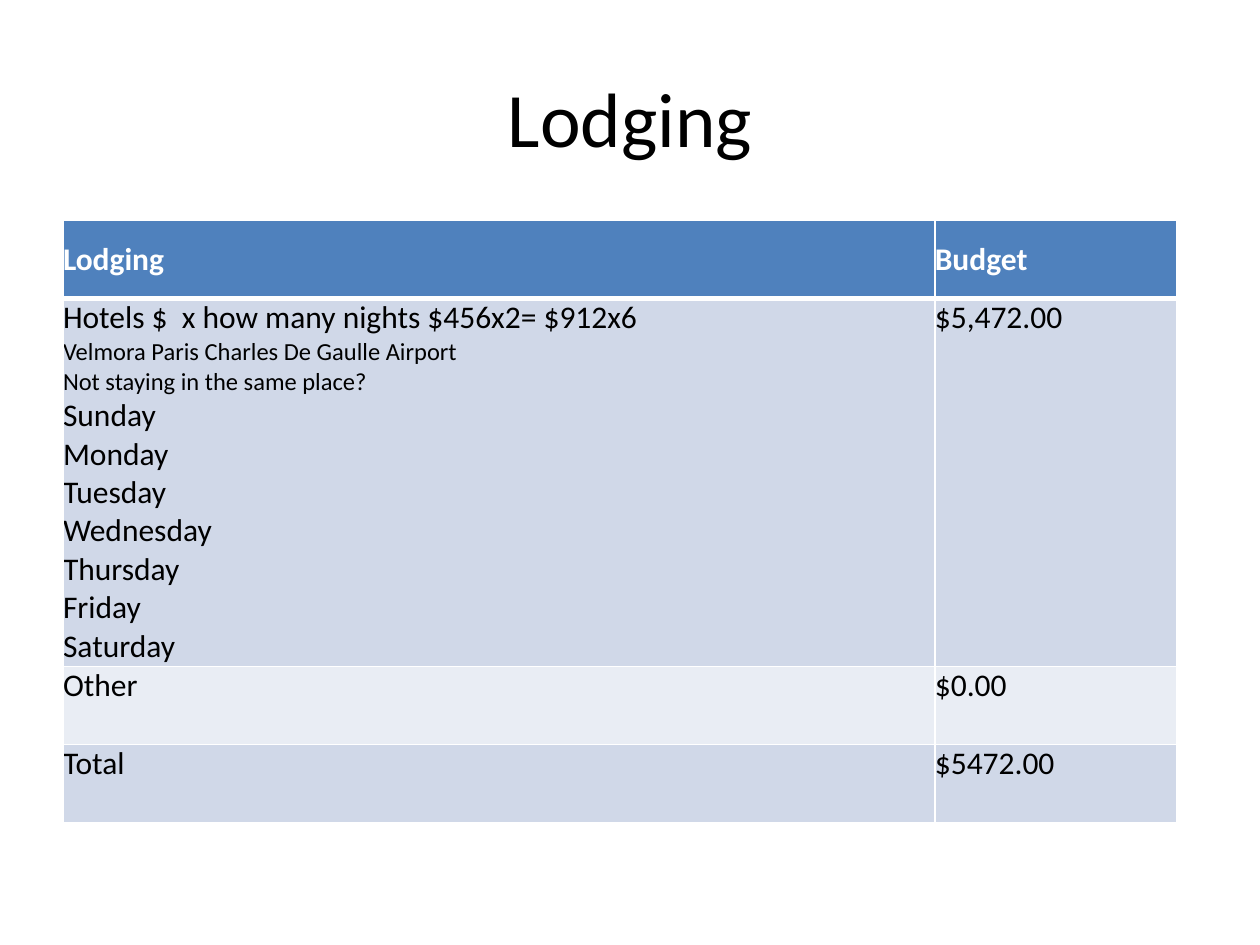
from dataclasses import dataclass

from lxml import etree
from pptx import Presentation
from pptx.dml.color import RGBColor
from pptx.enum import text
from pptx.oxml import ns
from pptx.util import Inches, Pt


@dataclass(frozen=True)
class Theme:
    font: str = "Calibri"
    ink: str = "000000"
    white: str = "FFFFFF"
    header: str = "4F81BD"
    bands: tuple = ("D0D8E8", "E9EDF4")
    title: int = 44
    body: int = 18
    note: int = 14
    thin: int = 1
    thick: int = 3


T = Theme()

DAYS = ["Sunday", "Monday", "Tuesday", "Wednesday", "Thursday", "Friday", "Saturday"]
HOTEL_LINES = [
    "Hotels $  x how many nights $456x2= $912x6",
    ("Velmora Paris Charles De Gaulle Airport", T.note),
    ("Not staying in the same place?", T.note),
    *DAYS,
]
ROWS = [
    (["Lodging"], ["Budget"]),
    (HOTEL_LINES, ["$5,472.00"]),
    (["Other"], ["$0.00"]),
    (["Total"], ["$5472.00"]),
]
COL_WIDTHS = [6.92, 1.92]
ROW_HEIGHTS = [0.62, 2.92, 0.62, 0.62]


def write(p, content, size=T.body, color=T.ink, bold=False, align=None):
    p.alignment = align
    r = p.add_run()
    r.text = content
    r.font.name = T.font
    r.font.size = Pt(size)
    r.font.bold = bold
    r.font.color.rgb = RGBColor.from_string(color)


def set_borders(cell, top, bottom):
    """Draw white borders; call before the fill, which must follow them in the XML."""
    tc_pr = cell._tc.get_or_add_tcPr()
    for side, width in (("L", T.thin), ("R", T.thin), ("T", top), ("B", bottom)):
        ln = etree.SubElement(tc_pr, ns.qn(f"a:ln{side}"), w=str(Pt(width)))
        fill = etree.SubElement(ln, ns.qn("a:solidFill"))
        etree.SubElement(fill, ns.qn("a:srgbClr"), val=T.white)


def fill_cell(cell, lines, row):
    is_header = row == 0
    cell.margin_left = cell.margin_right = cell.margin_top = cell.margin_bottom = 0
    cell.vertical_anchor = text.MSO_ANCHOR.MIDDLE if is_header else text.MSO_ANCHOR.TOP
    set_borders(cell, top=T.thick if row == 1 else T.thin,
                bottom=T.thick if is_header else T.thin)
    cell.fill.solid()
    cell.fill.fore_color.rgb = RGBColor.from_string(
        T.header if is_header else T.bands[(row - 1) % 2])
    tf = cell.text_frame
    for i, line in enumerate(lines):
        content, size = (line, T.body) if isinstance(line, str) else line
        p = tf.add_paragraph() if i else tf.paragraphs[0]
        write(p, content, size=size, bold=is_header,
              color=T.white if is_header else T.ink)


def add_title(s, content):
    sp = s.shapes.title
    sp.left, sp.top, sp.width, sp.height = map(Inches, (0.5, 0.3, 9, 1.25))
    tf = sp.text_frame
    tf.vertical_anchor = text.MSO_ANCHOR.MIDDLE
    write(tf.paragraphs[0], content, size=T.title, align=text.PP_ALIGN.CENTER)


def add_budget_table(s):
    table = s.shapes.add_table(
        len(ROWS), len(COL_WIDTHS), Inches(0.5), Inches(1.75),
        Inches(sum(COL_WIDTHS)), Inches(sum(ROW_HEIGHTS))).table
    for column, width in zip(table.columns, COL_WIDTHS):
        column.width = Inches(width)
    for i, (height, row) in enumerate(zip(ROW_HEIGHTS, ROWS)):
        table.rows[i].height = Inches(height)
        for j, lines in enumerate(row):
            fill_cell(table.cell(i, j), lines, i)


def main():
    prs = Presentation()
    prs.slide_width, prs.slide_height = Inches(10), Inches(7.5)
    s = prs.slides.add_slide(prs.slide_layouts[5])
    add_title(s, "Lodging")
    add_budget_table(s)
    prs.save("out.pptx")


if __name__ == "__main__":
    main()
